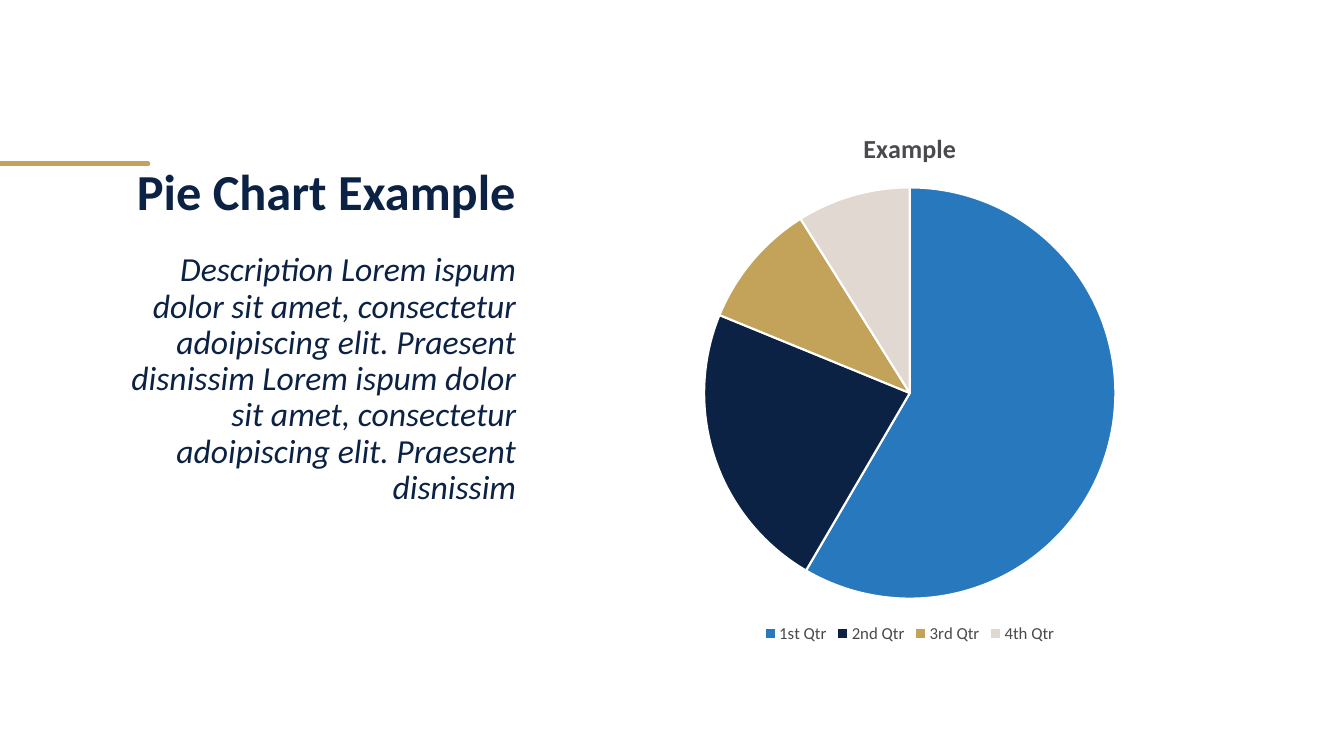
from pptx import Presentation
from pptx.chart.data import CategoryChartData as ChartData
from pptx.dml.color import RGBColor as RGB
from pptx.enum.chart import XL_CHART_TYPE as Kind, XL_LEGEND_POSITION as Side
from pptx.enum.shapes import MSO_CONNECTOR as Link
from pptx.enum.text import MSO_ANCHOR as Anchor, MSO_AUTO_SIZE as Fit, PP_ALIGN as Align
from pptx.oxml.ns import qn
from pptx.util import Pt
from lxml.etree import SubElement

PX = 9525  # 96 px to the inch
FACE = "Calibri"
NAVY = RGB(0x0C, 0x22, 0x44)
GOLD = RGB(0xC3, 0xA3, 0x59)
BLUE = RGB(0x28, 0x78, 0xBE)
SAND = RGB(0xE0, 0xD8, 0xD1)
GREY = RGB(0x49, 0x4A, 0x4D)
WHITE = RGB(0xFF, 0xFF, 0xFF)

TITLE = "Pie Chart Example"
LOREM = "Lorem ispum dolor sit amet, consectetur adoipiscing elit. Praesent disnissim"
BODY = f"Description {LOREM} {LOREM}"
SHARES = [("1st Qtr", 59, BLUE), ("2nd Qtr", 23, NAVY),
          ("3rd Qtr", 10, GOLD), ("4th Qtr", 9, SAND)]


def scale(*nums):
    return [n * PX for n in nums]


def style(font, size, color, bold=False, italic=False):
    font.name, font.size = FACE, Pt(size)
    font.bold, font.italic = bold, italic
    font.color.rgb = color


def write(shape, box, text, size, anchor, **look):
    """Fill a shape with one right-aligned paragraph."""
    shape.left, shape.top, shape.width, shape.height = scale(*box)
    frame = shape.text_frame
    frame.word_wrap, frame.auto_size = True, Fit.NONE
    frame.vertical_anchor = anchor
    para = frame.paragraphs[0]
    para.alignment, para.line_spacing = Align.RIGHT, 0.9
    run = para.add_run()
    run.text = text
    style(run.font, size, NAVY, **look)


def add_rule(slide, x, y, width):
    rule = slide.shapes.add_connector(Link.STRAIGHT, *scale(x, y, x + width, y))
    rule.line.color.rgb, rule.line.width = GOLD, Pt(3.25)
    rule.line._get_or_add_ln().set("cap", "rnd")
    SubElement(rule._element.spPr, qn("a:effectLst"))


def add_copy(slide, x, y, width, height):
    """Title in the upper part, description below it."""
    head, gap = 168, 20
    write(slide.shapes.title, (x, y, width, head), TITLE, 36, Anchor.BOTTOM, bold=True)
    top = head + gap
    note = slide.shapes.add_textbox(0, 0, 0, 0)
    write(note, (x, y + top, width, height - top), BODY, 24, Anchor.TOP, italic=True)


def add_pie(slide, *box):
    data = ChartData()
    data.categories = [name for name, _, _ in SHARES]
    data.add_series("Series 1", [share for _, share, _ in SHARES])
    chart = slide.shapes.add_chart(Kind.PIE, *scale(*box), data).chart
    style(chart.font, 10, GREY)

    # Heading and legend
    chart.has_title = True
    run = chart.chart_title.text_frame.paragraphs[0].add_run()
    run.text = "Example"
    style(run.font, 18.6, GREY, bold=True)
    chart.has_legend = True
    chart.legend.position = Side.BOTTOM
    chart.legend.include_in_layout = False
    style(chart.legend.font, 12, GREY)

    # Slices
    plot = chart.plots[0]
    plot.vary_by_categories = True
    for i, (_, _, color) in enumerate(SHARES):
        form = plot.series[0].points[i].format
        form.fill.solid()
        form.fill.fore_color.rgb = color
        form.line.color.rgb, form.line.width = WHITE, Pt(1.5)


def main():
    deck = Presentation()
    deck.slide_width, deck.slide_height = scale(1280, 720)
    slide = deck.slides.add_slide(deck.slide_layouts[5])
    add_rule(slide, 0, 156, 141)
    add_pie(slide, 542, 104, 649, 513)
    add_copy(slide, 88, 48, 413, 568)
    deck.save("out.pptx")


if __name__ == "__main__":
    main()
